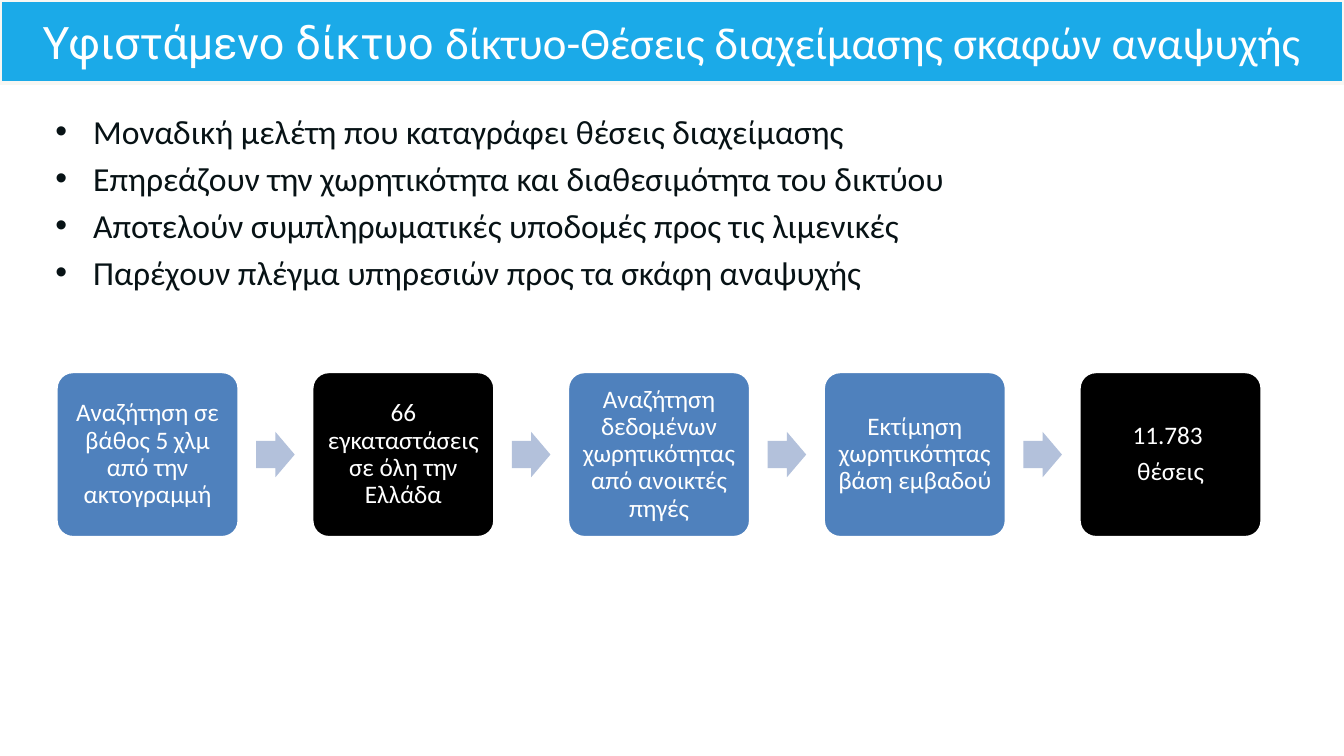
from pptx import Presentation
from pptx.dml.color import RGBColor
from pptx.enum import shapes, text
from pptx.oxml import parse_xml
from pptx.oxml.ns import nsdecls
from pptx.util import Cm, Pt

SKY = RGBColor(0x1B, 0xAA, 0xE8)
CREAM = RGBColor(0xF8, 0xF7, 0xF3)
INK = RGBColor(0x07, 0x12, 0x15)
BLUE = RGBColor(0x4F, 0x81, 0xBD)
PALE = RGBColor(0xB3, 0xC1, 0xDB)
BLACK = RGBColor(0, 0, 0)
WHITE = RGBColor(255, 255, 255)

TITLE = [("Υφιστάμενο δίκτυο ", "Roboto"),
         ("δίκτυο-Θέσεις διαχείμασης σκαφών αναψυχής", "Calibri")]
POINTS = ["Μοναδική μελέτη που καταγράφει θέσεις διαχείμασης",
          "Επηρεάζουν την χωρητικότητα και διαθεσιμότητα του δικτύου",
          "Αποτελούν συμπληρωματικές υποδομές προς τις λιμενικές",
          "Παρέχουν πλέγμα υπηρεσιών προς τα σκάφη αναψυχής"]
STEPS = [("Αναζήτηση σε βάθος 5 χλμ από την ακτογραμμή", BLUE),
         ("66 εγκαταστάσεις σε όλη την Ελλάδα", BLACK),
         ("Αναζήτηση δεδομένων χωρητικότητας από ανοικτές πηγές", BLUE),
         ("Εκτίμηση χωρητικότητας βάση εμβαδού", BLUE),
         ("11.783 \nθέσεις", BLACK)]


def place(shape, box):
    shape.left, shape.top, shape.width, shape.height = box


def style(font, size, color, name="Calibri"):
    font.size, font.name = Pt(size), name
    font.color.rgb = color


def add_title(slide, box):
    """Title placeholder shaped as a rounded banner."""
    title = slide.shapes.title
    place(title, box)
    title._element.spPr.append(parse_xml(
        f'<a:prstGeom {nsdecls("a")} prst="roundRect"><a:avLst/></a:prstGeom>'))
    title.fill.solid()
    title.fill.fore_color.rgb = SKY
    title.line.color.rgb = CREAM
    title.line.width = Pt(3)
    frame = title.text_frame
    frame.auto_size = text.MSO_AUTO_SIZE.NONE
    frame.vertical_anchor = text.MSO_ANCHOR.MIDDLE
    para = frame.paragraphs[0]
    para.alignment = text.PP_ALIGN.CENTER
    for words, name in TITLE:
        run = para.add_run()
        run.text = words
        style(run.font, 32, WHITE, name)


def add_points(slide, box):
    """Bulleted list in the body placeholder."""
    body = slide.placeholders[1]
    place(body, box)
    frame = body.text_frame
    frame.auto_size = text.MSO_AUTO_SIZE.NONE
    frame.text = "\n".join(POINTS)
    for i, para in enumerate(frame.paragraphs):
        para.space_before = Pt(4.8 if i else 0)
        style(para.runs[0].font, 24, INK)


def add_shape(slide, kind, box, color):
    shape = slide.shapes.add_shape(kind, *box)
    shape.shadow.inherit = False
    shape.fill.solid()
    shape.fill.fore_color.rgb = color
    shape.line.fill.background()
    return shape


def add_step(slide, box, words, color):
    """One rounded box of the process."""
    step = add_shape(slide, shapes.MSO_SHAPE.ROUNDED_RECTANGLE, box, color)
    step.adjustments[0] = 0.1
    step.line.color.rgb = WHITE
    step.line.width = Pt(2)
    frame = step.text_frame
    frame.word_wrap = True
    frame.vertical_anchor = text.MSO_ANCHOR.MIDDLE
    frame.margin_left = frame.margin_right = Cm(0.18)
    frame.margin_top = frame.margin_bottom = Cm(0.18)
    frame.text = words
    for para in frame.paragraphs:
        para.alignment = text.PP_ALIGN.CENTER
        para.line_spacing = 0.9
        para.space_after = Pt(6.3)
        style(para.runs[0].font, 18, WHITE)


def add_flow(slide, box):
    """Row of equal steps with an arrow centred in each gap."""
    left, top, width, height = box
    wide = Cm(4.6)
    pitch = (width - wide) // (len(STEPS) - 1)
    head, tall = Cm(0.97), Cm(1.14)
    for i, (words, color) in enumerate(STEPS):
        x = left + i * pitch
        if i:
            gap = pitch - wide
            spot = (x - (gap + head) // 2, top + (height - tall) // 2, head, tall)
            arrow = add_shape(slide, shapes.MSO_SHAPE.RIGHT_ARROW, spot, PALE)
            arrow.adjustments[0] = 0.6
            arrow.adjustments[1] = 0.5
        add_step(slide, (x, top, wide, height), words, color)


def main():
    deck = Presentation()
    deck.slide_width, deck.slide_height = Cm(33.87), Cm(19.05)
    slide = deck.slides.add_slide(deck.slide_layouts[1])
    add_title(slide, (Cm(0), Cm(0), deck.slide_width, Cm(2.1)))
    add_points(slide, (Cm(1.14), Cm(2.67), Cm(31.57), Cm(5.59)))
    add_flow(slide, (Cm(1.42), Cm(9.37), Cm(30.38), Cm(4.17)))
    deck.save("out.pptx")


if __name__ == "__main__":
    main()
